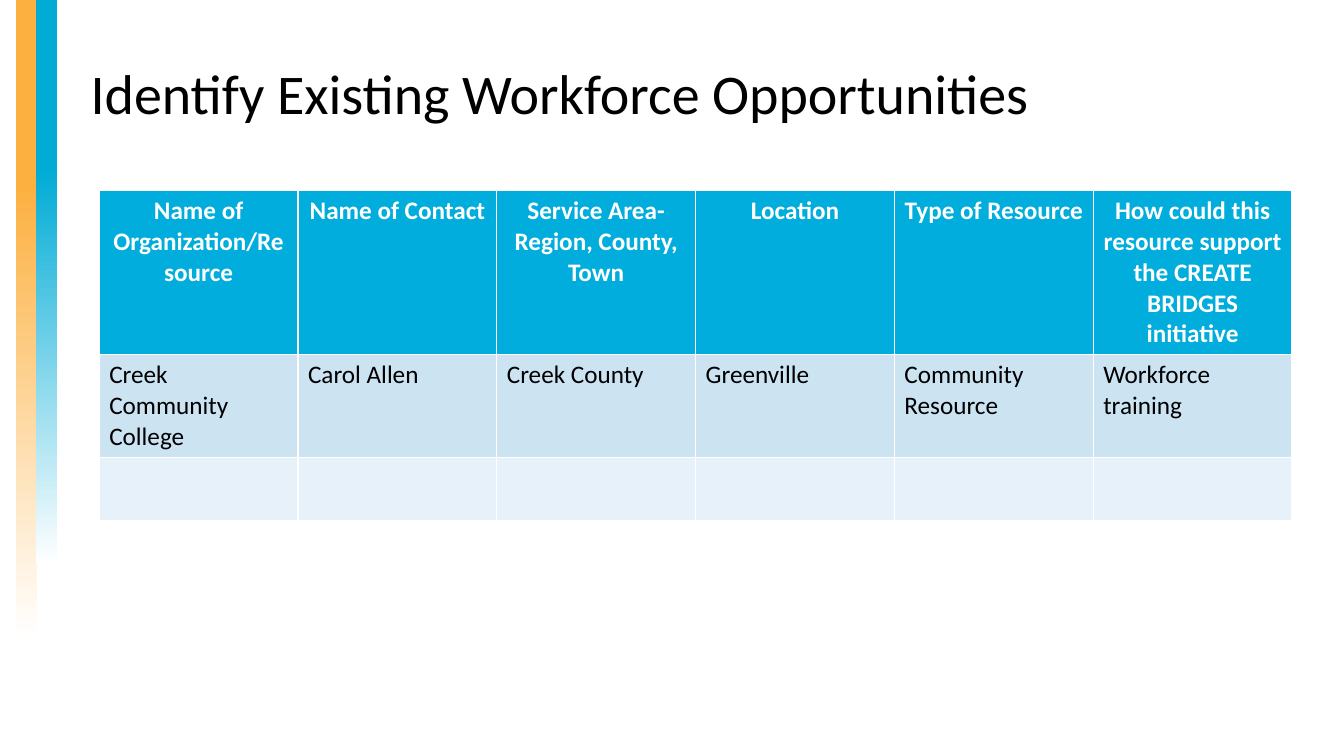
from pptx import Presentation
from pptx.dml.color import RGBColor
from pptx.enum.shapes import MSO_SHAPE as Shape
from pptx.enum.text import MSO_ANCHOR as Anchor, MSO_AUTO_SIZE as Fit, PP_ALIGN as Align
from pptx.util import Cm, Pt


def rgb(code):
    return RGBColor.from_string(code)


def style(para, size, color, bold, align):
    para.alignment = align
    for run in para.runs:
        font = run.font
        font.name = "Calibri"
        font.size = Pt(size)
        font.bold = bold
        font.color.rgb = rgb(color)


deck = Presentation()
deck.slide_width = Cm(33.87)
deck.slide_height = Cm(19.05)
slide = deck.slides.add_slide(deck.slide_layouts[5])

bars = [(0.4, 0.53, 16.08, "FCB040", 0.29), (0.9, 0.54, 14.22, "00ABD6", 0.3)]
for left, width, height, color, start in bars:
    bar = slide.shapes.add_shape(Shape.RECTANGLE, Cm(left), Cm(0), Cm(width), Cm(height))
    bar.shadow.inherit = False
    bar.line.fill.background()
    bar.fill.gradient()
    bar.fill.gradient_angle = 270
    first, last = bar.fill.gradient_stops
    first.color.rgb = rgb(color)
    first.position = start
    last.color.rgb = rgb("FFFFFF")
    last.position = 1

title = slide.shapes.title
title.left, title.top, title.width, title.height = Cm(2.03), Cm(0.58), Cm(31.01), Cm(3.68)
frame = title.text_frame
frame.text = "Identify Existing Workforce Opportunities"
frame.auto_size = Fit.NONE
frame.vertical_anchor = Anchor.MIDDLE
frame.paragraphs[0].line_spacing = 0.9
style(frame.paragraphs[0], 40, "000000", False, Align.LEFT)

heads = [
    "Name of Organization/Resource",
    "Name of Contact",
    "Service Area-Region, County, Town",
    "Location",
    "Type of Resource",
    "How could this resource support the CREATE BRIDGES initiative",
]
entry = [
    "Creek Community College",
    "Carol Allen",
    "Creek County",
    "Greenville",
    "Community Resource",
    "Workforce training",
]
rows = [
    (heads, "00ADDC", "FFFFFF", True, Align.CENTER),
    (entry, "CCE3F2", "000000", False, Align.LEFT),
    ([""] * len(heads), "E7F1F9", "000000", False, Align.LEFT),
]
table = slide.shapes.add_table(
    len(rows), len(heads), Cm(2.5), Cm(4.81), Cm(30.06), Cm(4.8)
).table
for r, (texts, fill, color, bold, align) in enumerate(rows):
    for c, text in enumerate(texts):
        cell = table.cell(r, c)
        cell.fill.solid()
        cell.fill.fore_color.rgb = rgb(fill)
        cell.text_frame.text = text
        style(cell.text_frame.paragraphs[0], 18, color, bold, align)

deck.save("out.pptx")
